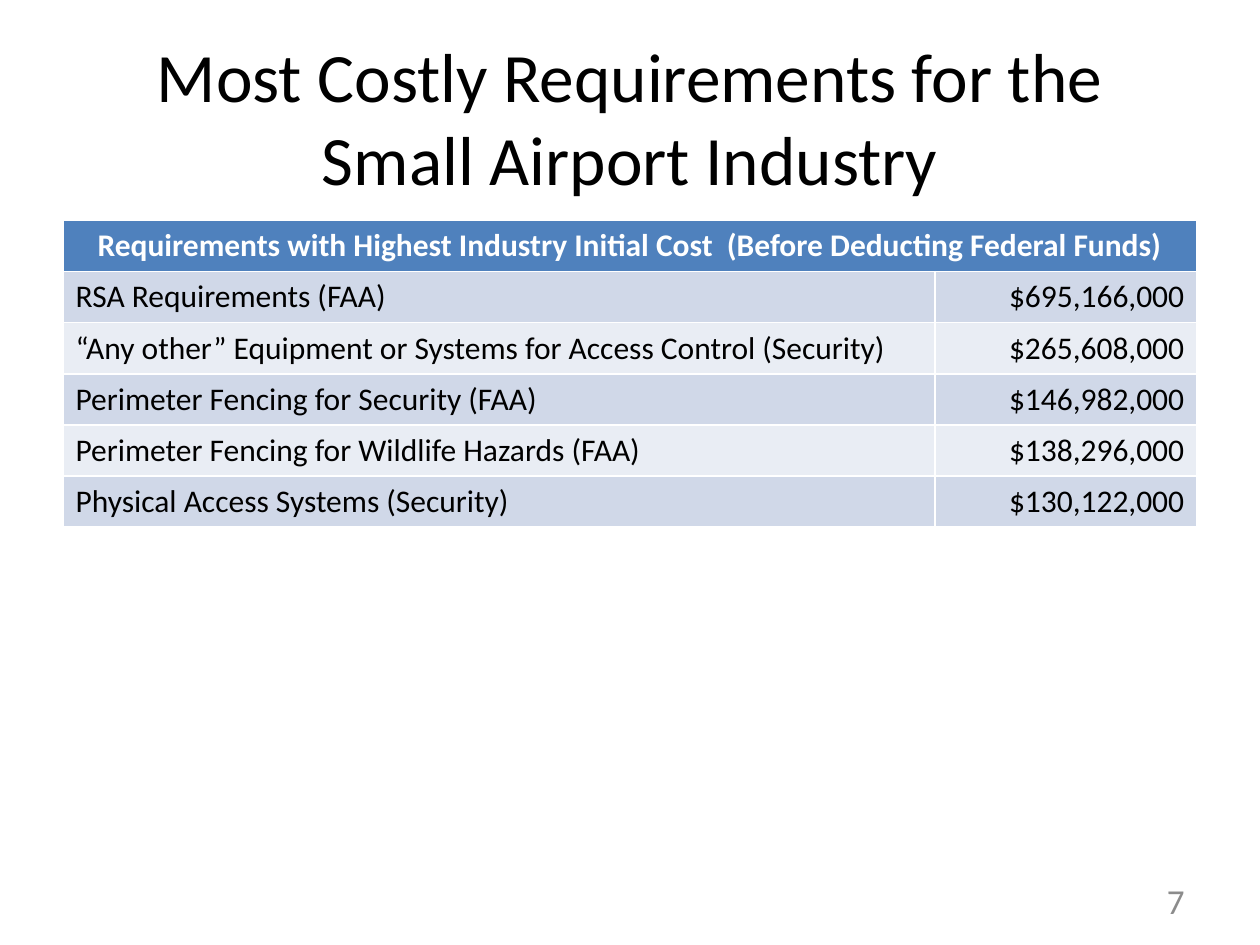
import dataclasses

import pptx
import pptx.dml.color
import pptx.enum.text
import pptx.util

Inches = pptx.util.Inches
ALIGN = pptx.enum.text.PP_ALIGN
MIDDLE = pptx.enum.text.MSO_ANCHOR.MIDDLE


@dataclasses.dataclass(frozen=True)
class Theme:
    """Font, type sizes and colours of the slide."""
    font: str = "Calibri"
    title_size: float = 39.6
    table_size: float = 18
    number_size: float = 20
    ink: str = "000000"
    paper: str = "FFFFFF"
    muted: str = "8C8C8C"
    header: str = "4F81BD"
    bands: tuple = ("D0D8E8", "E9EDF4")


THEME = Theme()
TITLE = "Most Costly Requirements for the Small Airport Industry"
HEADER = "Requirements with Highest Industry Initial Cost  (Before Deducting Federal Funds)"
COSTS = [
    ("RSA Requirements (FAA)", "$695,166,000"),
    ("“Any other” Equipment or Systems for Access Control (Security)", "$265,608,000"),
    ("Perimeter Fencing for Security (FAA)", "$146,982,000"),
    ("Perimeter Fencing for Wildlife Hazards (FAA)", "$138,296,000"),
    ("Physical Access Systems (Security)", "$130,122,000"),
]


def colour(value):
    """Return the colour object for a hex value."""
    return pptx.dml.color.RGBColor.from_string(value)


def write(frame, text, size, ink, align, bold=False):
    """Put one formatted paragraph in a text frame."""
    frame.text = text
    para = frame.paragraphs[0]
    para.alignment = align
    para.font.name = THEME.font
    para.font.size = pptx.util.Pt(size)
    para.font.bold = bold
    para.font.color.rgb = colour(ink)


def add_title(page, box):
    """Move the title placeholder to its box and fill it."""
    title = page.shapes.title
    title.left, title.top, title.width, title.height = box
    title.text_frame.word_wrap = True
    title.text_frame.vertical_anchor = MIDDLE
    write(title.text_frame, TITLE, THEME.title_size, THEME.ink, ALIGN.CENTER)


def fill_cell(cell, text, fill, ink, align, bold=False):
    """Fill one table cell and write its text."""
    cell.fill.solid()
    cell.fill.fore_color.rgb = colour(fill)
    write(cell.text_frame, text, THEME.table_size, ink, align, bold)


def add_cost_table(page, box):
    """Add the cost table with a merged header and banded rows."""
    table = page.shapes.add_table(len(COSTS) + 1, 2, *box).table
    table.columns[0].width = Inches(6.92)
    table.columns[1].width = box[2] - Inches(6.92)
    table.cell(0, 0).merge(table.cell(0, 1))
    fill_cell(table.cell(0, 0), HEADER, THEME.header, THEME.paper, ALIGN.CENTER, True)
    for row, costs in enumerate(COSTS, start=1):
        band = THEME.bands[(row - 1) % 2]
        for column, align in enumerate((ALIGN.LEFT, ALIGN.RIGHT)):
            fill_cell(table.cell(row, column), costs[column], band, THEME.ink, align)


def add_page_number(page, box):
    """Add the page number at the lower right."""
    frame = page.shapes.add_textbox(*box).text_frame
    frame.word_wrap = True
    frame.vertical_anchor = MIDDLE
    write(frame, "7", THEME.number_size, THEME.muted, ALIGN.RIGHT)


def main():
    """Build and save the slide."""
    deck = pptx.Presentation()
    deck.slide_width, deck.slide_height = Inches(10), Inches(7.5)
    page = deck.slides.add_slide(deck.slide_layouts.get_by_name("Title Only"))
    margin, width = Inches(0.5), Inches(9)
    add_title(page, (margin, Inches(0.3), width, Inches(1.25)))
    add_cost_table(page, (margin, Inches(1.75), width, Inches(2.43)))
    add_page_number(page, (Inches(7.17), Inches(6.95), Inches(2.33), Inches(0.4)))
    deck.save("out.pptx")


if __name__ == "__main__":
    main()
